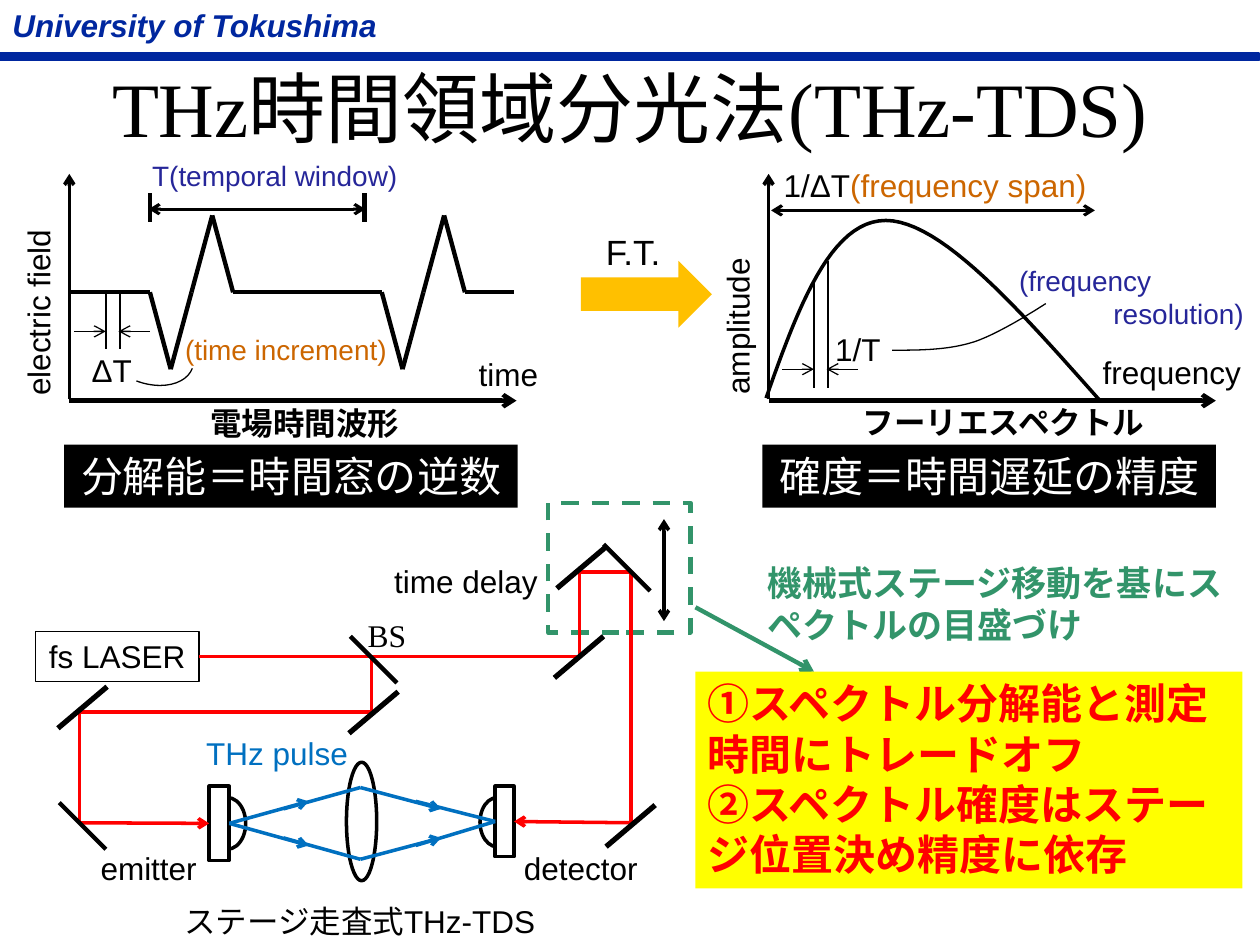
from dataclasses import dataclass
from itertools import pairwise
from typing import Optional

import pptx
import pptx.util
from pptx.dml.color import RGBColor
from pptx.enum.dml import MSO_LINE
from pptx.enum.shapes import MSO_CONNECTOR, MSO_SHAPE
from pptx.enum.text import MSO_ANCHOR, MSO_AUTO_SIZE, PP_ALIGN
from pptx.oxml.ns import qn
from lxml import etree

Inches, Pt = pptx.util.Inches, pptx.util.Pt
COLORS = {"black": "000000", "white": "FFFFFF", "navy": "00279F", "violet": "262699",
          "orange": "CC6600", "gold": "FFC000", "red": "FF0000", "blue": "0070C0",
          "green": "32946A", "yellow": "FFFF00"}
ALIGN = {"l": PP_ALIGN.LEFT, "c": PP_ALIGN.CENTER, "r": PP_ALIGN.RIGHT}
TOP, LEFT, BOTTOM, RIGHT = range(4)


@dataclass
class Label:
    text: str
    x: float
    y: float
    w: float
    h: float
    align: str = "c"  # one letter per paragraph
    color: str = "black"
    size: int = 18
    bold: bool = False
    italic: bool = False
    font: str = "Arial"
    wrap: bool = True
    upward: bool = False
    fill: Optional[str] = None
    line: Optional[str] = None
    extra: Optional[tuple[str, str]] = None  # second run: text, colour


@dataclass
class Line:
    x1: float
    y1: float
    x2: float
    y2: float
    width: float = 2
    color: str = "black"
    head: bool = False
    tail: bool = False


def rgb(name: str) -> RGBColor:
    return RGBColor.from_string(COLORS[name])


def style(sp, fill: Optional[str], line: Optional[str], width: float = 0.75) -> None:
    sp.shadow.inherit = False
    if fill:
        sp.fill.solid()
        sp.fill.fore_color.rgb = rgb(fill)
    else:
        sp.fill.background()
    if line:
        sp.line.color.rgb = rgb(line)
        sp.line.width = Pt(width)
    else:
        sp.line.fill.background()


def add_run(p, text: str, color: str, label: Label) -> None:
    r = p.add_run()
    r.text = text
    r.font.name, r.font.size = label.font, Pt(label.size)
    r.font.bold, r.font.italic = label.bold, label.italic
    r.font.color.rgb = rgb(color)


def draw_label(s, label: Label):
    box = [Inches(v) for v in (label.x, label.y, label.w, label.h)]
    if label.fill or label.line:
        sp = s.shapes.add_shape(MSO_SHAPE.RECTANGLE, *box)
        style(sp, label.fill, label.line)
    else:
        sp = s.shapes.add_textbox(*box)
    tf = sp.text_frame
    tf.word_wrap = label.wrap
    tf.vertical_anchor = MSO_ANCHOR.TOP
    if label.upward:
        sp.rotation = 180
        sp.element.txBody.find(qn("a:bodyPr")).set("vert", "eaVert")
    for i, (text, align) in enumerate(zip(label.text.split("\n"), label.align)):
        p = tf.add_paragraph() if i else tf.paragraphs[0]
        p.alignment = ALIGN[align]
        add_run(p, text, label.color, label)
    if label.extra:
        add_run(p, *label.extra, label)
    return sp


def draw_line(s, line: Line):
    c = s.shapes.add_connector(MSO_CONNECTOR.STRAIGHT, Inches(line.x1), Inches(line.y1),
                               Inches(line.x2), Inches(line.y2))
    c.line.color.rgb = rgb(line.color)
    c.line.width = Pt(line.width)
    ln = c.line._get_or_add_ln()
    for shown, tag in ((line.head, "a:headEnd"), (line.tail, "a:tailEnd")):
        if shown:
            etree.SubElement(ln, qn(tag)).set("type", "arrow")
    etree.SubElement(c.element.spPr, qn("a:effectLst"))
    return c


def draw_shape(s, kind, x: float, y: float, w: float, h: float,
               fill: Optional[str] = None, line: Optional[str] = "black", width: float = 2):
    sp = s.shapes.add_shape(kind, Inches(x), Inches(y), Inches(w), Inches(h))
    style(sp, fill, line, width)
    return sp


def draw_curve(s, start: tuple, segments: list[tuple], width: float) -> None:
    """Draw cubic Bezier segments as a fine open outline."""
    points, p0 = [], start
    for p1, p2, p3 in segments:
        for t in (i / 24 for i in range(1, 25)):
            u = 1 - t
            points.append(tuple(Inches(u**3 * a + 3 * u*u*t * b + 3 * u*t*t * c + t**3 * d)
                                for a, b, c, d in zip(p0, p1, p2, p3)))
        p0 = p3
    outline = s.shapes.build_freeform(Inches(start[0]), Inches(start[1]))
    outline.add_line_segments(points, close=False)
    style(outline.convert_to_shape(), None, "black", width)


def draw_header(s) -> None:
    draw_shape(s, MSO_SHAPE.RECTANGLE, 0, 0.42, 9.99, 0.06, "navy", "navy", 1)
    draw_label(s, Label("University of Tokushima", 0, 0, 3.12, 0.4, "l", "navy",
                        bold=True, italic=True, wrap=False))
    title = s.shapes.title
    title.left, title.top, title.width, title.height = map(Inches, (0, 0.41, 10, 0.88))
    tf = title.text_frame
    tf.auto_size, tf.vertical_anchor = MSO_AUTO_SIZE.NONE, MSO_ANCHOR.MIDDLE
    p = tf.paragraphs[0]
    p.alignment = PP_ALIGN.CENTER
    add_run(p, "THz時間領域分光法(THz-TDS)", "black",
            Label("", 0, 0, 0, 0, size=44, font="Times New Roman"))


def draw_graphs(s) -> None:
    # Axes, spans and increment markers of both graphs
    for x, span_start, span_end, span_y, mark, mark_tops, mark_end, mark_y in (
            (0.55, 1.18, 2.9, 1.66, 0.84, (2.32, 2.32), 2.77, 2.63),
            (6.1, 6.12, 8.69, 1.67, 6.46, (2.24, 2.07), 3.08, 2.93)):
        draw_line(s, Line(x, 3.17, x, 1.38, tail=True))
        draw_line(s, Line(x, 3.18, x + 3.55, 3.18, 2.5, tail=True))
        draw_line(s, Line(span_start, span_y, span_end, span_y, 1.75, head=True, tail=True))
        for i, top in enumerate(mark_tops):
            draw_line(s, Line(mark + 0.11 * i, top, mark + 0.11 * i, mark_end, 1.25))
        draw_line(s, Line(mark - 0.25, mark_y, mark, mark_y, 0.75, tail=True))
        draw_line(s, Line(mark + 0.35, mark_y, mark + 0.1, mark_y, 0.75, tail=True))
    # Pulse waveform and its window ends
    wave = [(0.55, 2.32)]
    for start in (1.19, 3.03):
        wave += [(start + 0.165 * i, 2.32 + dy) for i, dy in enumerate((0, 0.61, 0, -0.61, 0))]
    for a, b in pairwise(wave + [(4.08, 2.32)]):
        draw_line(s, Line(*a, *b, 2.5))
    for x in (1.19, 2.89):
        draw_line(s, Line(x, 1.76, x, 1.53, 2.75))
    draw_shape(s, MSO_SHAPE.ARC, 0.92, 2.41, 0.5, 0.76, width=0.75).rotation = 110.6
    # Spectrum and its pointer
    draw_curve(s, (6.08, 3.16), [((6.33, 2.45), (6.59, 1.75), (7.03, 1.75)),
                                 ((7.47, 1.75), (8.1, 2.47), (8.73, 3.18))], 2)
    draw_curve(s, (7.08, 2.78), [((7.29, 2.78), (7.51, 2.78), (7.71, 2.72)),
                                 ((7.92, 2.66), (8.3, 2.41), (8.3, 2.41))], 0.75)
    draw_shape(s, MSO_SHAPE.RIGHT_ARROW, 4.61, 2.07, 1.04, 0.53, "gold", None)


def draw_optics(s) -> None:
    laser = draw_label(s, Label("fs LASER", 0.28, 5.01, 1.3, 0.4, line="black"))
    # Emitter, lens, detector and moving stage
    draw_shape(s, MSO_SHAPE.OVAL, 1.66, 6.33, 0.29, 0.41)
    emitter = draw_shape(s, MSO_SHAPE.RECTANGLE, 1.66, 6.24, 0.16, 0.59, "white")
    draw_shape(s, MSO_SHAPE.OVAL, 2.75, 6.05, 0.24, 0.94)
    draw_shape(s, MSO_SHAPE.OVAL, 3.81, 6.33, 0.27, 0.39)
    detector = draw_shape(s, MSO_SHAPE.RECTANGLE, 3.93, 6.24, 0.15, 0.56, "white")
    stage = draw_shape(s, MSO_SHAPE.RECTANGLE, 4.35, 3.99, 1.13, 1.03, None, "green", 2.5)
    stage.line.dash_style = MSO_LINE.DASH
    draw_line(s, Line(5.27, 4.12, 5.27, 4.93, head=True, tail=True))
    # Laser beams
    draw_line(s, Line(1.58, 5.21, 4.61, 5.21, color="red")).begin_connect(laser, RIGHT)
    for beam in ((2.95, 5.21, 2.95, 5.66), (0.63, 5.65, 2.95, 5.65), (0.63, 5.65, 0.63, 6.54),
                 (4.6, 4.54, 4.6, 5.21), (4.59, 4.54, 5.01, 4.54), (5.01, 4.54, 5.01, 6.54)):
        draw_line(s, Line(*beam, color="red"))
    for x1, x2, target, side in ((0.63, 1.66, emitter, LEFT), (5.01, 4.08, detector, RIGHT)):
        draw_line(s, Line(x1, 6.53, x2, 6.53, color="red", tail=True)).end_connect(target, side)
    # Mirrors
    for x, y in ((2.77, 5.49), (0.46, 5.45), (4.4, 5.05), (4.42, 4.34), (4.81, 6.39)):
        draw_line(s, Line(x + 0.39, y, x, y + 0.33, 3))
    for x, y in ((2.78, 5.05), (0.47, 6.37), (4.79, 4.32)):
        draw_line(s, Line(x, y, x + 0.37, y + 0.37, 2.5))
    # THz rays: each half has an arrow part and a plain part
    for lens_y, near_y, far_y in ((6.25, 6.36, 6.42), (6.82, 6.71, 6.65)):
        ray = Line(1.82, 6.53, 2.45, near_y, color="blue", tail=True)
        draw_line(s, ray).begin_connect(emitter, RIGHT)
        draw_line(s, Line(2.25, far_y, 2.86, lens_y, color="blue"))
        draw_line(s, Line(2.86, lens_y, 3.5, far_y, color="blue", tail=True))
        draw_line(s, Line(3.93, 6.53, 3.3, near_y, color="blue")).begin_connect(detector, LEFT)
    draw_line(s, Line(5.52, 4.82, 6.46, 5.33, 2.5, "green", tail=True))


LABELS = [
    # Graphs
    Label("time", 3.67, 2.77, 0.73, 0.4),
    Label("electric field", 0.1, 1.45, 0.5, 1.79, upward=True),
    Label("T(temporal window)", 1.11, 1.21, 2.17, 0.37, "l", "violet", 16, wrap=False),
    Label("電場時間波形", 1.4, 3.16, 2.04, 0.4, bold=True),
    Label("ΔT", 0.63, 2.74, 0.57, 0.4, "l"),
    Label("(time increment)", 1.37, 2.59, 1.99, 0.37, "l", "orange", 16),
    Label("amplitude", 5.65, 1.44, 0.5, 1.79, upward=True),
    Label("フーリエスペクトル", 6.65, 3.15, 2.63, 0.4, bold=True),
    Label("frequency", 8.56, 2.75, 1.48, 0.4),
    Label("1/T", 6.53, 2.57, 0.57, 0.4, "l"),
    Label("1/ΔT", 6.12, 1.27, 2.79, 0.4, "l", extra=("(frequency span)", "orange")),
    Label("(frequency\nresolution)", 7.99, 2.04, 1.98, 0.64, "lr", "violet", 16),
    Label("F.T.", 4.71, 1.78, 0.67, 0.44, "l", size=20),
    Label("分解能＝時間窓の逆数", 0.51, 3.53, 3.6, 0.5, "c", "white", 24, fill="black"),
    Label("確度＝時間遅延の精度", 6.05, 3.53, 3.6, 0.5, "c", "white", 24, fill="black"),
    # Optics
    Label("ステージ走査式THz-TDS", 1.18, 7.11, 3.35, 0.4),
    Label("time delay", 3.03, 4.41, 1.39, 0.4, "l"),
    Label("THz pulse", 1.06, 5.78, 1.8, 0.4, "r", "blue"),
    Label("detector", 4.06, 6.69, 1.35, 0.4, "l"),
    Label("emitter", 0.51, 6.69, 1.34, 0.4),
    Label("BS", 2.8, 4.84, 0.54, 0.4, font="Times New Roman"),
    # Remarks
    Label("①スペクトル分解能と測定時間にトレードオフ\n②スペクトル確度はステージ位置決め精度に依存",
          5.52, 5.33, 4.34, 1.72, "ll", "red", 24, bold=True, fill="yellow"),
    Label("機械式ステージ移動を基にスペクトルの目盛づけ", 5.99, 4.41, 3.93, 0.77,
          "l", "green", 20, bold=True),
]


def main() -> None:
    prs = pptx.Presentation()
    prs.slide_width, prs.slide_height = Inches(10), Inches(7.5)
    s = prs.slides.add_slide(prs.slide_layouts[5])
    draw_header(s)
    draw_graphs(s)
    draw_optics(s)
    for label in LABELS:
        draw_label(s, label)
    prs.save("out.pptx")


if __name__ == "__main__":
    main()
